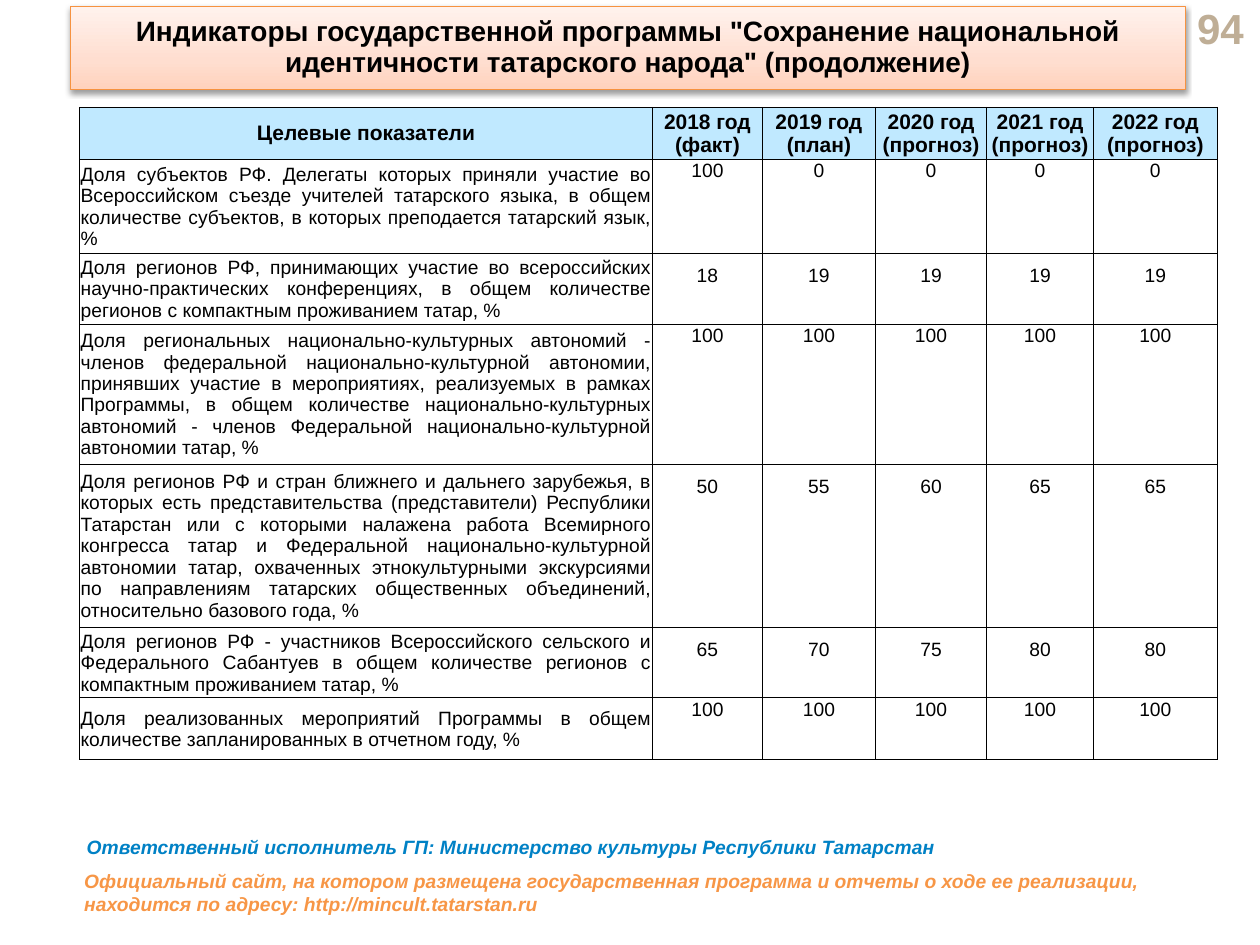
from lxml import etree
from pptx import Presentation
from pptx.dml.color import RGBColor
from pptx.enum.text import MSO_ANCHOR, PP_ALIGN
from pptx.oxml import parse_xml
from pptx.oxml.ns import nsdecls, qn
from pptx.util import Inches, Pt

LEFT, CENTER, RIGHT, JUSTIFY = PP_ALIGN.LEFT, PP_ALIGN.CENTER, PP_ALIGN.RIGHT, PP_ALIGN.JUSTIFY
TOP, MIDDLE = MSO_ANCHOR.TOP, MSO_ANCHOR.MIDDLE

BLACK = RGBColor(0x00, 0x00, 0x00)
WHITE = RGBColor(0xFF, 0xFF, 0xFF)
SKY = RGBColor(0xC0, 0xE9, 0xFF)
BLUE = RGBColor(0x00, 0x81, 0xC5)
ORANGE = RGBColor(0xF7, 0x96, 0x46)
OUTLINE = RGBColor(0xF6, 0x92, 0x40)
SAND = RGBColor(0xBF, 0xAE, 0x96)
PEACH = ((0, RGBColor(0xFF, 0xD2, 0xBD)), (35, RGBColor(0xFF, 0xDE, 0xD0)), (100, RGBColor(0xFF, 0xF2, 0xED)))

GRID_COLUMNS, GRID_ROWS = 100, 75
COLUMN_WIDTHS = (45.5, 8.7, 9, 8.8, 8.5, 9.8)
ROW_HEIGHTS = (4, 7.5, 5.6, 11.1, 12.9, 5.6, 4.9)
TIGHT = {"margin_left": Inches(0.01), "margin_top": Inches(0.01), "margin_right": Inches(0.01), "margin_bottom": 0}
PADDED = {"margin_left": Inches(0.04), "margin_top": Inches(0.07), "margin_right": Inches(0.04), "margin_bottom": Inches(0.07)}

TITLE = 'Индикаторы государственной программы "Сохранение национальной идентичности татарского народа" (продолжение)'
HEADINGS = (
    "Целевые показатели", "2018 год\n(факт)", "2019 год\n(план)",
    "2020 год\n(прогноз)", "2021 год\n(прогноз)", "2022 год\n(прогноз)",
)
INDICATORS = (
    ("Доля субъектов РФ. Делегаты которых приняли участие во Всероссийском съезде учителей татарского языка, "
     "в общем количестве субъектов, в которых преподается татарский язык, %", (100, 0, 0, 0, 0), False),
    ("Доля регионов РФ, принимающих участие во всероссийских научно-практических конференциях, "
     "в общем количестве регионов с компактным проживанием татар, %", (18, 19, 19, 19, 19), True),
    ("Доля региональных национально-культурных автономий - членов федеральной национально-культурной автономии, "
     "принявших участие в мероприятиях, реализуемых в рамках Программы, в общем количестве национально-культурных "
     "автономий - членов Федеральной национально-культурной автономии татар, %", (100,) * 5, False),
    ("Доля регионов РФ и стран ближнего и дальнего зарубежья, в которых есть представительства (представители) "
     "Республики Татарстан или с которыми налажена работа Всемирного конгресса татар и Федеральной "
     "национально-культурной автономии татар, охваченных этнокультурными экскурсиями по направлениям татарских "
     "общественных объединений, относительно базового года, %", (50, 55, 60, 65, 65), True),
    ("Доля регионов РФ - участников Всероссийского сельского и Федерального Сабантуев в общем количестве регионов "
     "с компактным проживанием татар, %", (65, 70, 75, 80, 80), True),
    ("Доля реализованных мероприятий Программы в общем количестве запланированных в отчетном году, %",
     (100,) * 5, False),
)
EXECUTOR = "Ответственный исполнитель ГП: Министерство культуры Республики Татарстан"
WEBSITE = ("Официальный сайт, на котором размещена государственная программа и отчеты о ходе ее реализации, "
           "находится по адресу: http://mincult.tatarstan.ru")


class IndicatorPage:
    """Holds the style and the current slide, and draws each kind of element on a grid."""

    def __init__(self, deck):
        self.unit_x = deck.slide_width / GRID_COLUMNS
        self.unit_y = deck.slide_height / GRID_ROWS
        self.page = deck.slides.add_slide(deck.slide_layouts[5])
        self.font_name = "Arial"

    def place(self, left, top, width, height):
        return (round(left * self.unit_x), round(top * self.unit_y),
                round(width * self.unit_x), round(height * self.unit_y))

    def assign(self, target, values):
        for name, value in values.items():
            setattr(target, name, value)

    def fill_text(self, frame, text, size, color=BLACK, bold=False, italic=False, align=LEFT, spacing=None):
        frame.text = text
        frame.word_wrap = True
        for para in frame.paragraphs:
            self.assign(para, {"alignment": align, "line_spacing": spacing, "space_before": Pt(0)})
            for span in para.runs:
                self.assign(span.font, {"name": self.font_name, "size": Pt(size), "bold": bold, "italic": italic})
                span.font.color.rgb = color

    def title(self, text, area):
        box = self.page.shapes.title
        self.assign(box, dict(zip(("left", "top", "width", "height"), self.place(*area))))
        properties = box.element.spPr
        stops = "".join(f'<a:gs pos="{share * 1000}"><a:srgbClr val="{color}"/></a:gs>' for share, color in PEACH)
        for markup in (
            f'<a:prstGeom {nsdecls("a")} prst="roundRect"><a:avLst/></a:prstGeom>',
            f'<a:gradFill {nsdecls("a")} rotWithShape="1"><a:gsLst>{stops}</a:gsLst>'
            '<a:lin ang="16200000" scaled="0"/></a:gradFill>',
        ):
            properties.append(parse_xml(markup))
        box.line.color.rgb = OUTLINE
        box.line.width = Pt(0.75)
        properties.append(parse_xml(
            f'<a:effectLst {nsdecls("a")}><a:outerShdw blurRad="{Pt(3.1)}" dist="{Pt(1.6)}" dir="5400000" '
            'rotWithShape="0"><a:srgbClr val="000000"><a:alpha val="38000"/></a:srgbClr></a:outerShdw></a:effectLst>'))
        self.fill_text(box.text_frame, text, 16, bold=True, align=CENTER, spacing=0.9)
        box.text_frame.vertical_anchor = MIDDLE

    def label(self, text, area, anchor=TOP, **style):
        box = self.page.shapes.add_textbox(*self.place(*area))
        self.fill_text(box.text_frame, text, bold=True, **style)
        box.text_frame.vertical_anchor = anchor

    def cell(self, cell, text, fill, anchor, margins, **style):
        self.assign(cell, {"vertical_anchor": anchor, **margins})
        self.fill_text(cell.text_frame, text, **style)
        properties = cell._tc.get_or_add_tcPr()
        for side in ("a:lnL", "a:lnR", "a:lnT", "a:lnB"):
            border = etree.SubElement(properties, qn(side), w=str(int(Pt(0.25))))
            paint = etree.SubElement(border, qn("a:solidFill"))
            etree.SubElement(paint, qn("a:srgbClr"), val=str(BLACK))
        cell.fill.solid()
        cell.fill.fore_color.rgb = fill

    def table(self, left, top):
        area = self.place(left, top, sum(COLUMN_WIDTHS), sum(ROW_HEIGHTS))
        table = self.page.shapes.add_table(len(ROW_HEIGHTS), len(COLUMN_WIDTHS), *area).table
        table.horz_banding = False
        for column, width in zip(table.columns, COLUMN_WIDTHS):
            column.width = round(width * self.unit_x)
        for row, height in zip(table.rows, ROW_HEIGHTS):
            row.height = round(height * self.unit_y)
        for index, heading in enumerate(HEADINGS):
            self.cell(table.cell(0, index), heading, SKY, MIDDLE, TIGHT, size=12, bold=True, align=CENTER)
        for row, (name, values, padded) in enumerate(INDICATORS, 1):
            self.cell(table.cell(row, 0), name, WHITE, MIDDLE, TIGHT, size=11, align=JUSTIFY)
            for column, value in enumerate(values, 1):
                self.cell(table.cell(row, column), str(value), WHITE, TOP, PADDED if padded else TIGHT,
                          size=11, align=CENTER, spacing=1.15 if padded else None)


def main():
    deck = Presentation()
    deck.slide_width, deck.slide_height = Inches(10), Inches(7.5)
    page = IndicatorPage(deck)
    page.label("94", (91.1, 0.5, 8.6, 3.4), MIDDLE, size=24, color=SAND, align=RIGHT)
    page.title(TITLE, (5.6, 0.5, 88.5, 6.6))
    page.table(6.3, 8.5)
    page.label(EXECUTOR, (5.9, 65.8, 94, 2.9), size=11, color=BLUE, italic=True)
    page.label(WEBSITE, (5.7, 68.5, 85.9, 4.3), size=11, color=ORANGE, italic=True)
    deck.save("out.pptx")


if __name__ == "__main__":
    main()
